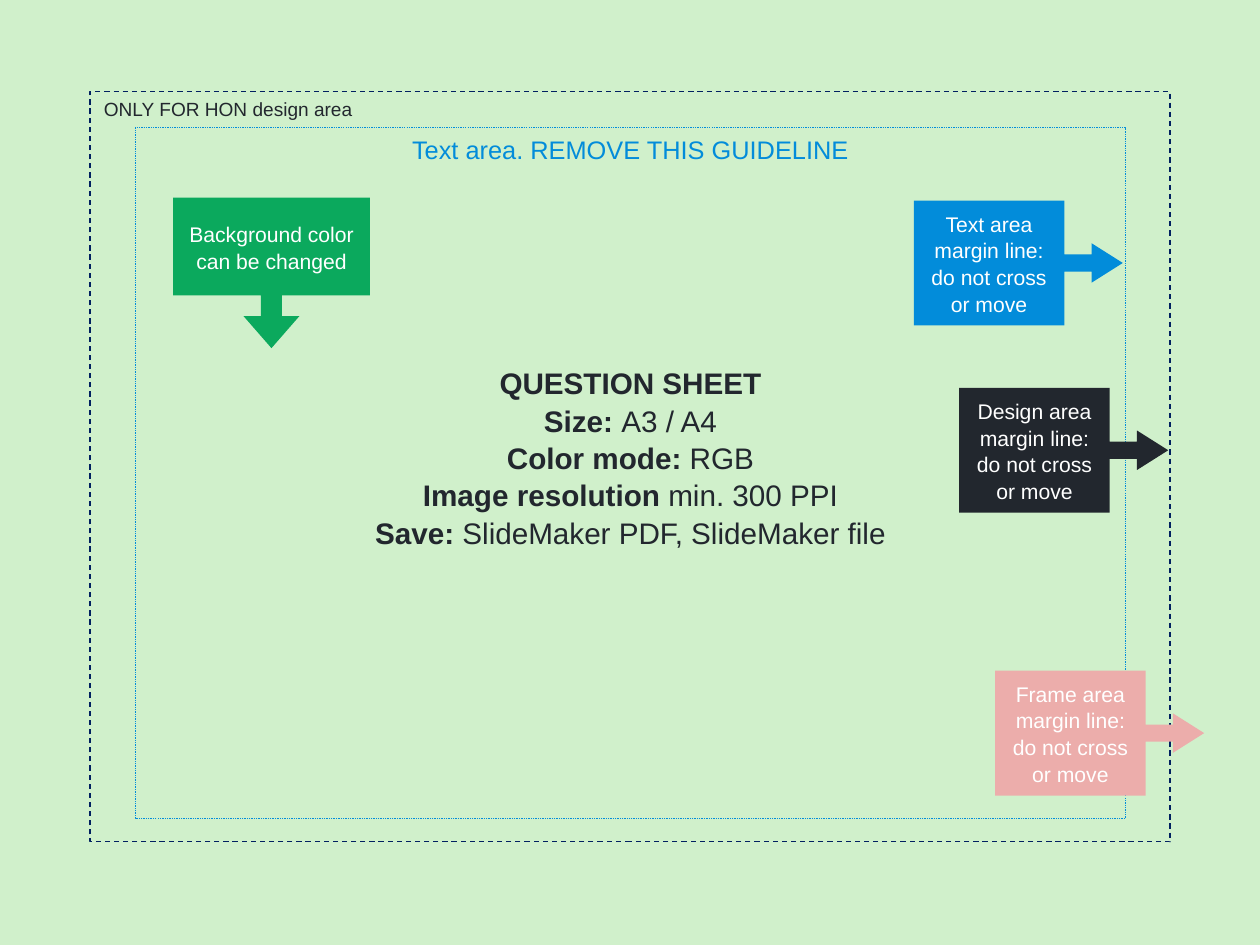
from pptx import Presentation
from pptx.dml.color import RGBColor
from pptx.enum.dml import MSO_LINE
from pptx.enum.shapes import MSO_SHAPE
from pptx.enum.text import MSO_ANCHOR, PP_ALIGN
from pptx.util import Inches, Pt

RECTANGLE = MSO_SHAPE.RECTANGLE
DOWN_CALLOUT = MSO_SHAPE.DOWN_ARROW_CALLOUT
RIGHT_CALLOUT = MSO_SHAPE.RIGHT_ARROW_CALLOUT
DASH = MSO_LINE.DASH
TOP, MIDDLE = MSO_ANCHOR.TOP, MSO_ANCHOR.MIDDLE
CENTER, LEFT = PP_ALIGN.CENTER, PP_ALIGN.LEFT

PALE_GREEN = RGBColor(0xD0, 0xF0, 0xCB)
GREEN = RGBColor(0x0B, 0xA9, 0x5D)
BLUE = RGBColor(0x02, 0x8C, 0xDA)
NAVY = RGBColor(0x00, 0x20, 0x60)
DARK = RGBColor(0x22, 0x27, 0x2E)
PINK = RGBColor(0xEC, 0xAD, 0xAB)
WHITE = RGBColor(0xFF, 0xFF, 0xFF)

FONT = "Arial"
LINE_SPACING = 1.05
WIDTH, HEIGHT = 13.32, 9.99
DESIGN_AREA = (0.95, 0.97, 11.42, 7.93)
TEXT_AREA = (1.43, 1.35, 10.47, 7.3)
MARGIN_CALLOUT_SIZE = (2.21, 1.32)
DOWN_ADJUSTMENTS = (0.139, 0.186, 0.213, 0.65)
RIGHT_ADJUSTMENTS = (0.137, 0.158, 0.25, 0.72)

SHEET_FACTS = [
    ("QUESTION SHEET", ""),
    ("Size: ", "A3 / A4"),
    ("Color mode: ", "RGB"),
    ("Image resolution ", "min. 300 PPI"),
    ("Save: ", "SlideMaker PDF, SlideMaker file"),
]
MARGIN_CALLOUTS = [
    ("Frame", PINK, 10.52, 7.09),
    ("Design", DARK, 10.14, 4.1),
    ("Text", BLUE, 9.66, 2.12),
]


def add_panel(slide, kind, box, fill=None, line=None, line_width=1):
    """Add a preset shape with an optional fill and an optional dashed outline."""
    shape = slide.shapes.add_shape(kind, *map(Inches, box))
    shape.shadow.inherit = False
    if fill is None:
        shape.fill.background()
    else:
        shape.fill.solid()
        shape.fill.fore_color.rgb = fill
    if line is None:
        shape.line.fill.background()
    else:
        shape.line.color.rgb = line
        shape.line.width = Pt(line_width)
        shape.line.dash_style = DASH
    return shape


def prepare_frame(shape, anchor, inset_x, inset_y):
    frame = shape.text_frame
    frame.word_wrap = True
    frame.vertical_anchor = anchor
    frame.margin_left = frame.margin_right = Inches(inset_x)
    frame.margin_top = frame.margin_bottom = Inches(inset_y)
    return frame


def style_paragraph(paragraph, size, color, alignment=CENTER, spacing=LINE_SPACING):
    paragraph.alignment = alignment
    paragraph.line_spacing = spacing
    for run in paragraph.runs:
        run.font.name = FONT
        run.font.size = Pt(size)
        run.font.color.rgb = color


def add_text_area(slide, box):
    shape = add_panel(slide, RECTANGLE, box, line=BLUE, line_width=0.25)
    frame = prepare_frame(shape, TOP, 0.09, 0.05)
    frame.text = "Text area. REMOVE THIS GUIDELINE"
    style_paragraph(frame.paragraphs[0], 19.3, BLUE)
    for index, (label, value) in enumerate(SHEET_FACTS):
        paragraph = frame.add_paragraph()
        paragraph.text = label
        paragraph.runs[0].font.bold = True
        if value:
            paragraph.add_run().text = value
        if index == 0:
            paragraph.space_before = Pt(151.5)
        style_paragraph(paragraph, 22.6, DARK)


def add_design_area(slide, box):
    left, top, width, _ = box
    add_panel(slide, RECTANGLE, box, line=NAVY)
    label_box = (left + 0.05, top + 0.01, width / 3, 0.35)
    label = slide.shapes.add_textbox(*map(Inches, label_box))
    frame = prepare_frame(label, TOP, 0.1, 0.05)
    frame.text = "ONLY FOR HON design area"
    style_paragraph(frame.paragraphs[0], 14.5, DARK, LEFT, 1.0)


def add_callout(slide, kind, box, fill, adjustments, text):
    shape = add_panel(slide, kind, box, fill=fill)
    for index, value in enumerate(adjustments):
        shape.adjustments[index] = value
    frame = prepare_frame(shape, MIDDLE, 0.11, 0.06)
    frame.text = text
    for paragraph in frame.paragraphs:
        style_paragraph(paragraph, 16.1, WHITE)


def build_guideline_slide(presentation):
    slide = presentation.slides.add_slide(presentation.slide_layouts[6])
    add_panel(slide, RECTANGLE, (0, 0, WIDTH, HEIGHT), fill=PALE_GREEN)
    add_text_area(slide, TEXT_AREA)
    add_callout(slide, DOWN_CALLOUT, (1.83, 2.09, 2.08, 1.59), GREEN,
                DOWN_ADJUSTMENTS, "Background color can be changed")
    add_design_area(slide, DESIGN_AREA)
    for area, color, left, top in MARGIN_CALLOUTS:
        add_callout(slide, RIGHT_CALLOUT, (left, top, *MARGIN_CALLOUT_SIZE), color,
                    RIGHT_ADJUSTMENTS,
                    f"{area} area margin line:\ndo not cross or move")


def main():
    presentation = Presentation()
    presentation.slide_width = Inches(WIDTH)
    presentation.slide_height = Inches(HEIGHT)
    build_guideline_slide(presentation)
    presentation.save("out.pptx")


if __name__ == "__main__":
    main()
